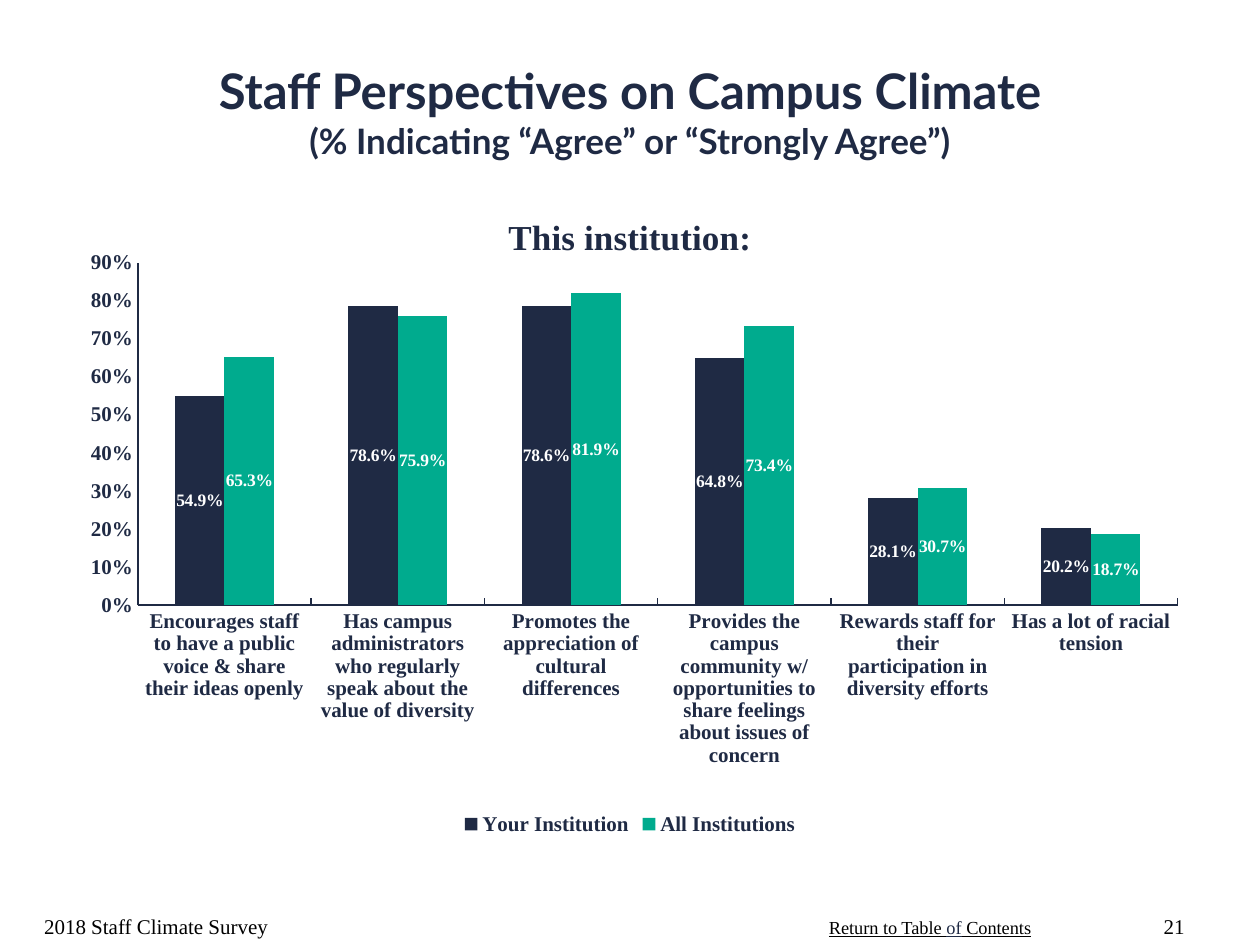
from dataclasses import dataclass

from lxml import etree
from pptx import Presentation
from pptx.chart.data import CategoryChartData
from pptx.dml.color import RGBColor
from pptx.enum.chart import XL_CHART_TYPE, XL_LABEL_POSITION, XL_LEGEND_POSITION, XL_TICK_MARK
from pptx.enum.text import MSO_ANCHOR, PP_ALIGN
from pptx.oxml.ns import qn
from pptx.util import Cm, Pt

COLUMNS = XL_CHART_TYPE.COLUMN_CLUSTERED
LABEL_CENTER = XL_LABEL_POSITION.CENTER
LEGEND_BOTTOM = XL_LEGEND_POSITION.BOTTOM
TICK_INSIDE, TICK_NONE = XL_TICK_MARK.INSIDE, XL_TICK_MARK.NONE
TOP, MIDDLE, BOTTOM = MSO_ANCHOR.TOP, MSO_ANCHOR.MIDDLE, MSO_ANCHOR.BOTTOM
LEFT, CENTER, RIGHT = PP_ALIGN.LEFT, PP_ALIGN.CENTER, PP_ALIGN.RIGHT


@dataclass(frozen=True)
class Theme:
    navy: RGBColor = RGBColor(0x1F, 0x2A, 0x44)
    green: RGBColor = RGBColor(0x00, 0xAB, 0x8E)
    white: RGBColor = RGBColor(0xFF, 0xFF, 0xFF)
    black: RGBColor = RGBColor(0x00, 0x00, 0x00)
    heading_font: str = "Lato"
    body_font: str = "Times New Roman"
    title_size: float = 28
    subtitle_size: float = 20
    chart_title_size: float = 20
    body_size: float = 12
    link_size: float = 10.5
    label_size: float = 10
    line_width: float = 0.75


class SlideBuilder:
    def __init__(self, slide, theme):
        self.slide = slide
        self.theme = theme

    def style(self, font, size, color, bold=False, name=None):
        font.name = name or self.theme.body_font
        font.size = Pt(size)
        font.bold = bold
        font.color.rgb = color

    def text_box(self, box, text, anchor=TOP, align=LEFT, wrap=True):
        shape = self.slide.shapes.add_textbox(*(Cm(length) for length in box))
        text_frame = shape.text_frame
        text_frame.word_wrap = wrap
        text_frame.vertical_anchor = anchor
        text_frame.text = text
        paragraph = text_frame.paragraphs[0]
        paragraph.alignment = align
        return paragraph

    def title(self, box, heading, subheading):
        theme = self.theme
        paragraph = self.text_box(box, "", MIDDLE, CENTER)
        paragraph.text = f"{heading}\v{subheading}"
        for run, size in zip(paragraph.runs, (theme.title_size, theme.subtitle_size)):
            self.style(run.font, size, theme.navy, True, theme.heading_font)

    def footer(self, box, text, align=LEFT):
        paragraph = self.text_box(box, text, BOTTOM, align)
        self.style(paragraph.runs[0].font, self.theme.body_size, self.theme.black)

    def underlined(self, box, parts):
        paragraph = self.text_box(box, "", wrap=False)
        for text, color in parts:
            run = paragraph.add_run()
            run.text = text
            self.style(run.font, self.theme.link_size, color)
            run.font.underline = True

    def column_chart(self, box, title, categories, series, plot_area):
        theme = self.theme
        data = CategoryChartData(number_format="0.0%")
        data.categories = categories
        for name, values, _ in series:
            data.add_series(name, values)
        frame = self.slide.shapes.add_chart(COLUMNS, *(Cm(length) for length in box), data)
        chart = frame.chart
        self.style(chart.font, theme.label_size, theme.navy, True)

        chart.has_title = True
        chart.chart_title.text_frame.text = title
        title_run = chart.chart_title.text_frame.paragraphs[0].runs[0]
        self.style(title_run.font, theme.chart_title_size, theme.navy, True)
        chart.has_legend = True
        chart.legend.position = LEGEND_BOTTOM
        chart.legend.include_in_layout = False
        self.style(chart.legend.font, theme.body_size, theme.navy, True)

        for axis, tick in ((chart.category_axis, TICK_INSIDE), (chart.value_axis, TICK_NONE)):
            axis.has_major_gridlines = False
            axis.major_tick_mark = tick
            axis.minor_tick_mark = TICK_NONE
            axis.format.line.color.rgb = theme.navy
            axis.format.line.width = Pt(theme.line_width)
            self.style(axis.tick_labels.font, theme.body_size, theme.navy, True)
        value_axis = chart.value_axis
        value_axis.minimum_scale, value_axis.maximum_scale = 0, 0.9
        value_axis.major_unit = 0.1
        value_axis.tick_labels.number_format = "0%"
        value_axis.tick_labels.number_format_is_linked = False

        plot = chart.plots[0]
        plot.vary_by_categories = False
        plot.gap_width = 150
        plot.overlap = 0
        for columns, (_, _, color) in zip(plot.series, series):
            columns.format.fill.solid()
            columns.format.fill.fore_color.rgb = color
            labels = columns.data_labels
            labels.show_value = True
            labels.position = LABEL_CENTER
            labels.number_format = "0.0%"
            labels.number_format_is_linked = False
            self.style(labels.font, theme.label_size, theme.white, True)
        self.place_plot(chart, plot_area)

    def place_plot(self, chart, plot_area):
        area = chart.element.find(".//" + qn("c:plotArea"))
        for old_layout in area.findall(qn("c:layout")):
            area.remove(old_layout)
        layout = etree.Element(qn("c:layout"))
        manual = etree.SubElement(layout, qn("c:manualLayout"))
        settings = [("layoutTarget", "inner"), ("xMode", "edge"), ("yMode", "edge")]
        settings += zip("xywh", plot_area)
        for tag, value in settings:
            etree.SubElement(manual, qn(f"c:{tag}")).set("val", str(value))
        area.insert(0, layout)


def main():
    theme = Theme()
    presentation = Presentation()
    presentation.slide_width, presentation.slide_height = Cm(25.4), Cm(19.05)
    slide = presentation.slides.add_slide(presentation.slide_layouts[6])
    builder = SlideBuilder(slide, theme)

    builder.underlined(
        (16.46, 18.34, 4.62, 0.71),
        [("Return to Table ", theme.black), ("of", theme.navy), (" Contents", theme.black)],
    )
    builder.title(
        (0, 0.64, 25.4, 3.18),
        "Staff Perspectives on Campus Climate",
        "(% Indicating “Agree” or “Strongly Agree”)",
    )
    builder.column_chart(
        (1.27, 3.81, 22.86, 13.13),
        "This institution:",
        [
            "Encourages staff to have a public voice & share their ideas openly",
            "Has campus administrators who regularly speak about the value of diversity",
            "Promotes the appreciation of cultural differences",
            "Provides the campus community w/ opportunities to share feelings "
            "about issues of concern",
            "Rewards staff for their participation in diversity efforts",
            "Has a lot of racial tension",
        ],
        [
            ("Your Institution", (0.549, 0.786, 0.786, 0.648, 0.281, 0.202), theme.navy),
            ("All Institutions", (0.653, 0.759, 0.819, 0.734, 0.307, 0.187), theme.green),
        ],
        (0.066, 0.113, 0.917, 0.526),
    )
    builder.footer((0.64, 17.78, 8.05, 1.27), "2018 Staff Climate Survey")
    builder.footer((22.86, 17.78, 1.27, 1.27), "21", RIGHT)
    presentation.save("out.pptx")


if __name__ == "__main__":
    main()
